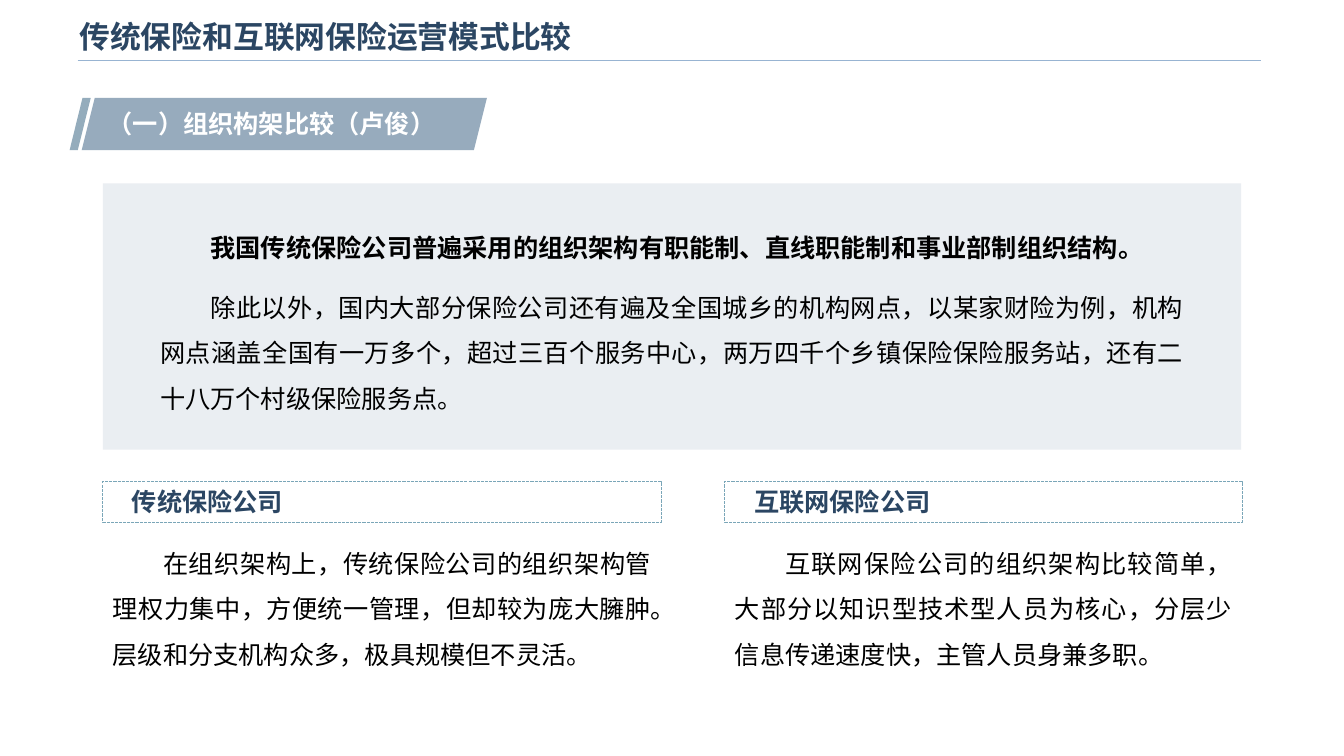
"""Build a slide comparing how traditional and online insurers are organised."""
from lxml.etree import SubElement
from pptx import Presentation
from pptx.dml.color import RGBColor
from pptx.enum.dml import MSO_LINE
from pptx.enum.shapes import MSO_CONNECTOR, MSO_SHAPE
from pptx.enum.text import MSO_ANCHOR, PP_ALIGN
from pptx.oxml.ns import qn
from pptx.util import Inches, Pt

TITLE = "传统保险和互联网保险运营模式比较"
LABEL = "（一）组织构架比较（卢俊）"
INTRO = [
    ("我国传统保险公司普遍采用的组织架构有职能制、直线职能制和事业部制组织结构。", True),
    ("除此以外，国内大部分保险公司还有遍及全国城乡的机构网点，以某家财险为例，机构"
     "网点涵盖全国有一万多个，超过三百个服务中心，两万四千个乡镇保险保险服务站，"
     "还有二十八万个村级保险服务点。", False),
]
CARDS = [
    (1.02, 5.54, "传统保险公司",
     "在组织架构上，传统保险公司的组织架构管理权力集中，方便统一管理，"
     "但却较为庞大臃肿。层级和分支机构众多，极具规模但不灵活。"),
    (7.19, 5.13, "互联网保险公司",
     "互联网保险公司的组织架构比较简单，大部分以知识型技术型人员为核心，"
     "分层少信息传递速度快，主管人员身兼多职。"),
]
NAVY = RGBColor(0x2B, 0x46, 0x63)
BLACK = RGBColor(0, 0, 0)
WHITE = RGBColor(0xFF, 0xFF, 0xFF)
PALE = RGBColor(0xEA, 0xEE, 0xF2)
SKY = RGBColor(0x98, 0xB4, 0xD2)
TEAL = RGBColor(0x7A, 0xA6, 0xB8)
SLANTS = [
    (0.69, 0.21, 0.613, RGBColor(0x94, 0xAC, 0xBC)),
    (0.81, 4.02, 0.25, RGBColor(0x97, 0xAB, 0xBD)),
]
SANS = "Noto Sans CJK SC"
BODY = {"alignment": PP_ALIGN.JUSTIFY, "line_spacing": 1.5, "space_after": Pt(10)}
HEAD = {"alignment": PP_ALIGN.LEFT}


def apply(item, form):
    for key, value in form.items():
        setattr(item, key, value)


def write(shape, lines, color, form, left=0, first=0, size=18, face=SANS,
          anchor=MSO_ANCHOR.TOP):
    frame = shape.text_frame
    apply(frame, {"word_wrap": True, "vertical_anchor": anchor})
    for num, (text, bold) in enumerate(lines):
        para = frame.add_paragraph() if num else frame.paragraphs[0]
        apply(para, form)
        props = para._p.get_or_add_pPr()
        props.set("marL", str(Inches(left)))
        props.set("indent", str(Inches(first)))
        run = para.add_run()
        run.text = text
        apply(run.font, {"size": Pt(size), "bold": bold, "name": face})
        run.font.color.rgb = color
        SubElement(run._r.get_or_add_rPr(), qn("a:ea")).set("typeface", SANS)


def place(shapes, kind, box, fill=None):
    shape = shapes.add_shape(kind, *map(Inches, box))
    shape.shadow.inherit = False
    shape.line.fill.background()
    if fill is None:
        shape.fill.background()
    else:
        shape.fill.solid()
        shape.fill.fore_color.rgb = fill
    return shape


def label(shapes, box, *args, **form):
    write(shapes.add_textbox(*map(Inches, box)), *args, **form)


def main():
    deck = Presentation()
    apply(deck, {"slide_width": Inches(13.33), "slide_height": Inches(7.5)})
    shapes = deck.slides.add_slide(deck.slide_layouts[6]).shapes

    rule = shapes.add_connector(MSO_CONNECTOR.STRAIGHT,
                                *map(Inches, (0.77, 0.6, 12.51, 0.6)))
    rule.line.color.rgb = SKY
    rule.line.width = Pt(1)
    SubElement(rule._element.spPr, qn("a:effectLst"))

    place(shapes, MSO_SHAPE.RECTANGLE, (1.02, 1.82, 11.29, 2.64), PALE)
    label(shapes, (0.69, 0.09, 10.71, 0.53), [(TITLE, True)], NAVY, HEAD,
          size=22, face="Arial", anchor=MSO_ANCHOR.MIDDLE)

    group = shapes.add_group_shape()
    for left, width, slant, fill in SLANTS:
        shape = place(group.shapes, MSO_SHAPE.PARALLELOGRAM,
                      (left, 0.97, width, 0.52), fill)
        shape.adjustments[0] = slant
    label(shapes, (0.97, 1.03, 3.67, 0.4), [(LABEL, True)], WHITE, HEAD)
    label(shapes, (1.49, 2.11, 10.35, 2.06), INTRO, BLACK, BODY, first=0.5)

    for left, width, name, text in CARDS:
        label(shapes, (left, 5.24, width, 1.46), [(text, False)], BLACK, BODY,
              first=0.5)
        frame = place(shapes, MSO_SHAPE.RECTANGLE, (left, 4.78, width, 0.4))
        frame.line.color.rgb = TEAL
        apply(frame.line, {"width": Pt(0.75), "dash_style": MSO_LINE.SQUARE_DOT})
        write(frame, [(name, True)], NAVY, HEAD, left=0.19)

    deck.save("out.pptx")


if __name__ == "__main__":
    main()
